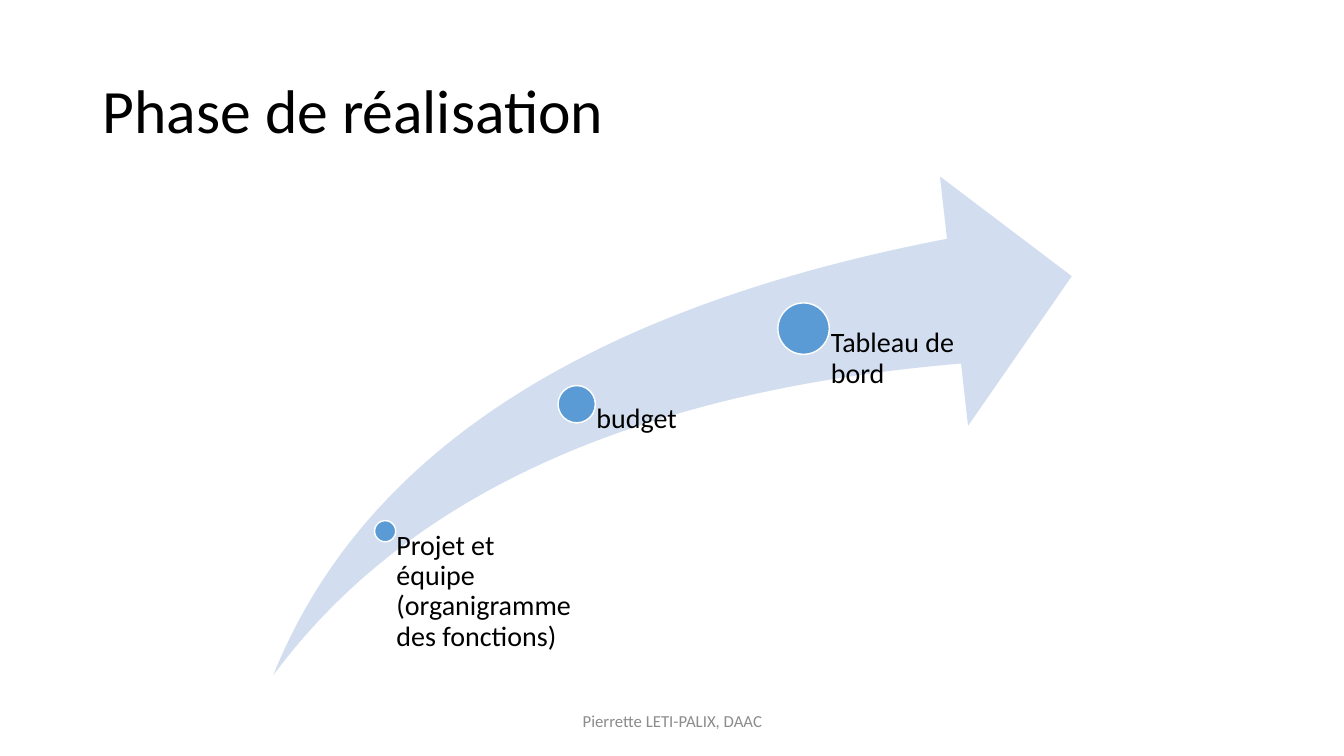
from pptx import Presentation
from pptx.dml.color import RGBColor
from pptx.enum.shapes import MSO_SHAPE
from pptx.enum.text import MSO_ANCHOR, MSO_AUTO_SIZE, PP_ALIGN
from pptx.util import Pt

PX = 9144  # 100 px to the inch
OVAL, SWOOSH = MSO_SHAPE.OVAL, MSO_SHAPE.SWOOSH_ARROW
TOP, MIDDLE = MSO_ANCHOR.TOP, MSO_ANCHOR.MIDDLE
LEFT, CENTER = PP_ALIGN.LEFT, PP_ALIGN.CENTER
NO_FIT = MSO_AUTO_SIZE.NONE

COLORS = {"arrow": "D2DEEF", "dot": "5B9BD5", "edge": "FFFFFF",
          "text": "000000", "footer": "8C8C8C"}

TITLE = ("Phase de réalisation", (92, 40, 1150, 145))
FOOTER = ("Pierrette LETI-PALIX, DAAC", (442, 695, 450, 40))
ARROW = (271, 175, 792, 495)
# label, dot centre x, dot centre y, dot diameter, label width
STEPS = [
    ("Projet et équipe (organigramme des fonctions)", 382, 527, 21, 185),
    ("budget", 572, 401, 37, 190),
    ("Tableau de bord", 797, 326, 51, 190),
]


def color(name):
    return RGBColor.from_string(COLORS[name])


def emu(box):
    return [round(v * PX) for v in box]


def write(shape, text, size, ink="text", align=LEFT, spacing=1.0, **frame):
    body = shape.text_frame
    body.text = text
    for key, value in {"word_wrap": True, "auto_size": NO_FIT, **frame}.items():
        setattr(body, key, value)
    line = body.paragraphs[0]
    line.alignment, line.line_spacing = align, spacing
    font = line.runs[0].font
    font.name, font.size, font.color.rgb = "Calibri", Pt(size), color(ink)


def draw(slide, kind, box, fill):
    shape = slide.shapes.add_shape(kind, *emu(box))
    shape.shadow.inherit = False
    shape.fill.solid()
    shape.fill.fore_color.rgb = color(fill)
    return shape


def main():
    deck = Presentation()
    deck.slide_width, deck.slide_height = emu((1333, 750))
    slide = deck.slides.add_slide(deck.slide_layouts[5])

    text, box = TITLE
    title = slide.shapes.title
    title.left, title.top, title.width, title.height = emu(box)
    write(title, text, 44, spacing=0.9, vertical_anchor=MIDDLE)

    arrow = draw(slide, SWOOSH, ARROW, "arrow")
    arrow.line.fill.background()
    for i in range(2):
        arrow.adjustments[i] = 0.25

    base = ARROW[1] + ARROW[3]
    for text, x, y, size, width in STEPS:
        dot = draw(slide, OVAL, (x - size / 2, y - size / 2, size, size), "dot")
        dot.line.color.rgb = color("edge")
        dot.line.width = Pt(1)
        label = slide.shapes.add_textbox(*emu((x, y, width, base - y)))
        write(label, text, 20, spacing=0.9, vertical_anchor=TOP,
              margin_left=round(size * 0.53 * PX), margin_top=0,
              margin_right=0, margin_bottom=0)

    text, box = FOOTER
    footer = slide.shapes.add_textbox(*emu(box))
    write(footer, text, 12, "footer", CENTER, vertical_anchor=MIDDLE)
    deck.save("out.pptx")


if __name__ == "__main__":
    main()
